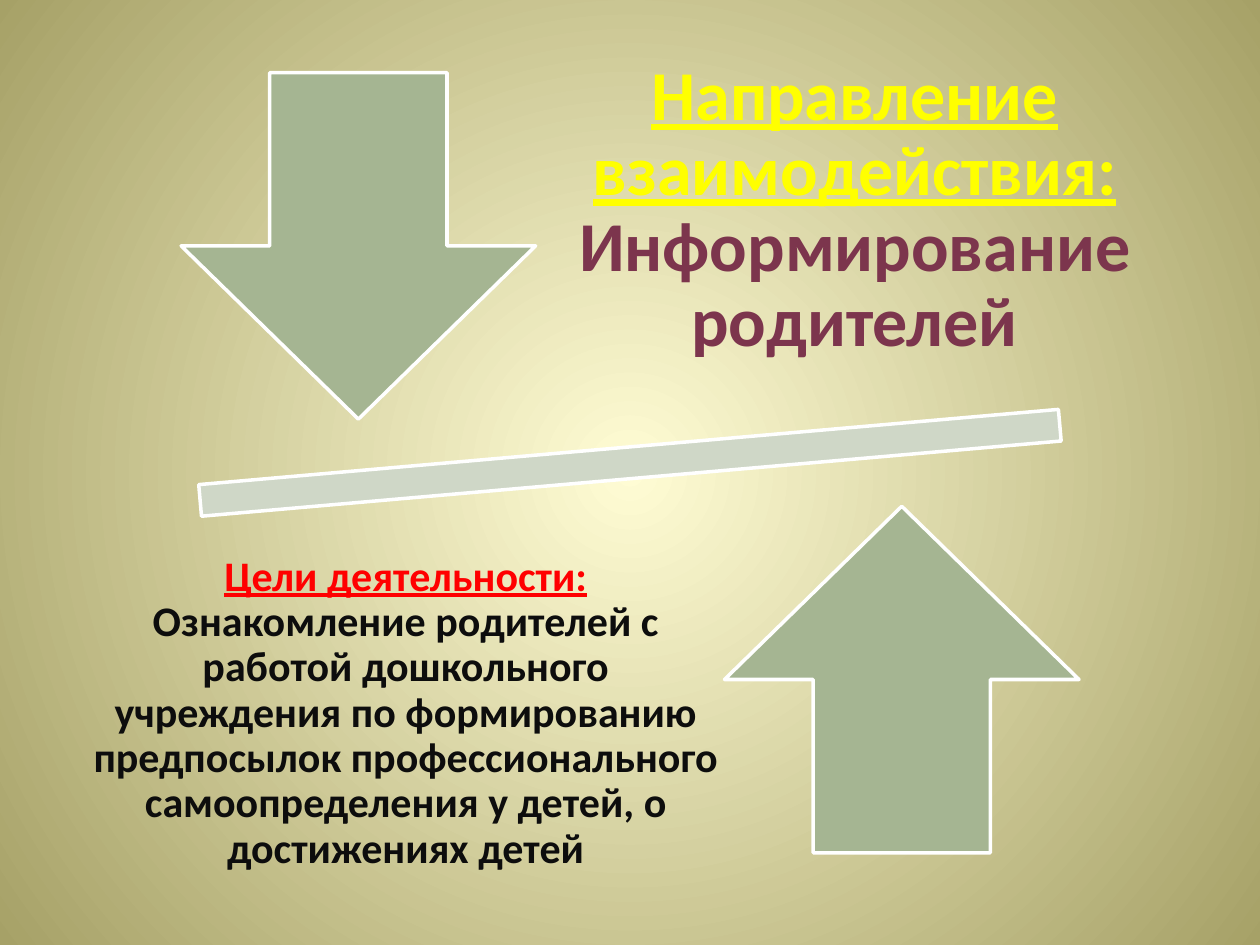
import pptx
import pptx.dml.color
import pptx.enum.shapes
import pptx.enum.text
import pptx.oxml.ns
import pptx.util
from lxml import etree

Pt = pptx.util.Pt
SHAPES = pptx.enum.shapes.MSO_SHAPE


def color(value):
    return pptx.dml.color.RGBColor.from_string(value)


class SlideBuilder:
    font = "Calibri"
    outline = "FFFFFF"
    outline_width = 2

    def __init__(self, slide):
        self.slide = slide

    def radial_background(self, center, edge):
        fill = self.slide.background.fill
        fill.gradient()
        for stop, position, value in zip(fill.gradient_stops, (0, 1), (center, edge)):
            stop.position = position
            stop.color.rgb = color(value)
        qn = pptx.oxml.ns.qn
        linear = next(self.slide.element.iter(qn("a:lin")))
        gradient = linear.getparent()
        gradient.remove(linear)
        circle = etree.SubElement(gradient, qn("a:path"), path="circle")
        sides = dict.fromkeys("ltrb", "50000")
        etree.SubElement(circle, qn("a:fillToRect"), sides)

    def shape(self, preset, left, top, width, height, fill, rotation=0):
        figure = self.slide.shapes.add_shape(
            preset, Pt(left), Pt(top), Pt(width), Pt(height)
        )
        figure.shadow.inherit = False
        figure.rotation = rotation
        figure.fill.solid()
        figure.fill.fore_color.rgb = color(fill)
        figure.line.color.rgb = color(self.outline)
        figure.line.width = Pt(self.outline_width)

    def text(self, left, top, width, height, inset, size, heading, body):
        box = self.slide.shapes.add_textbox(Pt(left), Pt(top), Pt(width), Pt(height))
        frame = box.text_frame
        frame.word_wrap = True
        frame.vertical_anchor = pptx.enum.text.MSO_ANCHOR.MIDDLE
        frame.margin_left = frame.margin_right = Pt(inset)
        frame.margin_top = frame.margin_bottom = Pt(inset)
        paragraph = frame.paragraphs[0]
        paragraph.alignment = pptx.enum.text.PP_ALIGN.CENTER
        paragraph.line_spacing = 0.9
        for (words, value), underline in ((heading, True), (body, False)):
            run = paragraph.add_run()
            run.text = words
            run.font.name = self.font
            run.font.size = Pt(size)
            run.font.bold = True
            run.font.underline = underline
            run.font.color.rgb = color(value)


def main():
    deck = pptx.Presentation()
    deck.slide_width, deck.slide_height = Pt(720), Pt(540)
    builder = SlideBuilder(deck.slides.add_slide(deck.slide_layouts[6]))
    arrow_size = (202.6, 198)
    arrow_fill = "A5B592"

    builder.radial_background("FFFCD4", "A6A167")
    builder.shape(SHAPES.MATH_MINUS, 24.5, 226, 671, 77, "CFD7C7", rotation=355)
    builder.shape(SHAPES.DOWN_ARROW, 103.5, 41.5, *arrow_size, arrow_fill)
    builder.text(
        307.4, 16.5, 362, 208, 22.4, 40,
        ("Направление взаимодействия: ", "FFFF00"),
        ("Информирование родителей", "7C354D"),
    )
    builder.shape(SHAPES.UP_ARROW, 414, 289.3, *arrow_size, arrow_fill)
    builder.text(
        39.6, 303.8, 384.5, 208, 13.44, 24,
        ("Цели деятельности: ", "FF0000"),
        (
            "Ознакомление родителей с работой дошкольного учреждения "
            "по формированию предпосылок профессионального "
            "самоопределения у детей, о достижениях детей",
            "0D0D0D",
        ),
    )
    deck.save("out.pptx")


if __name__ == "__main__":
    main()
